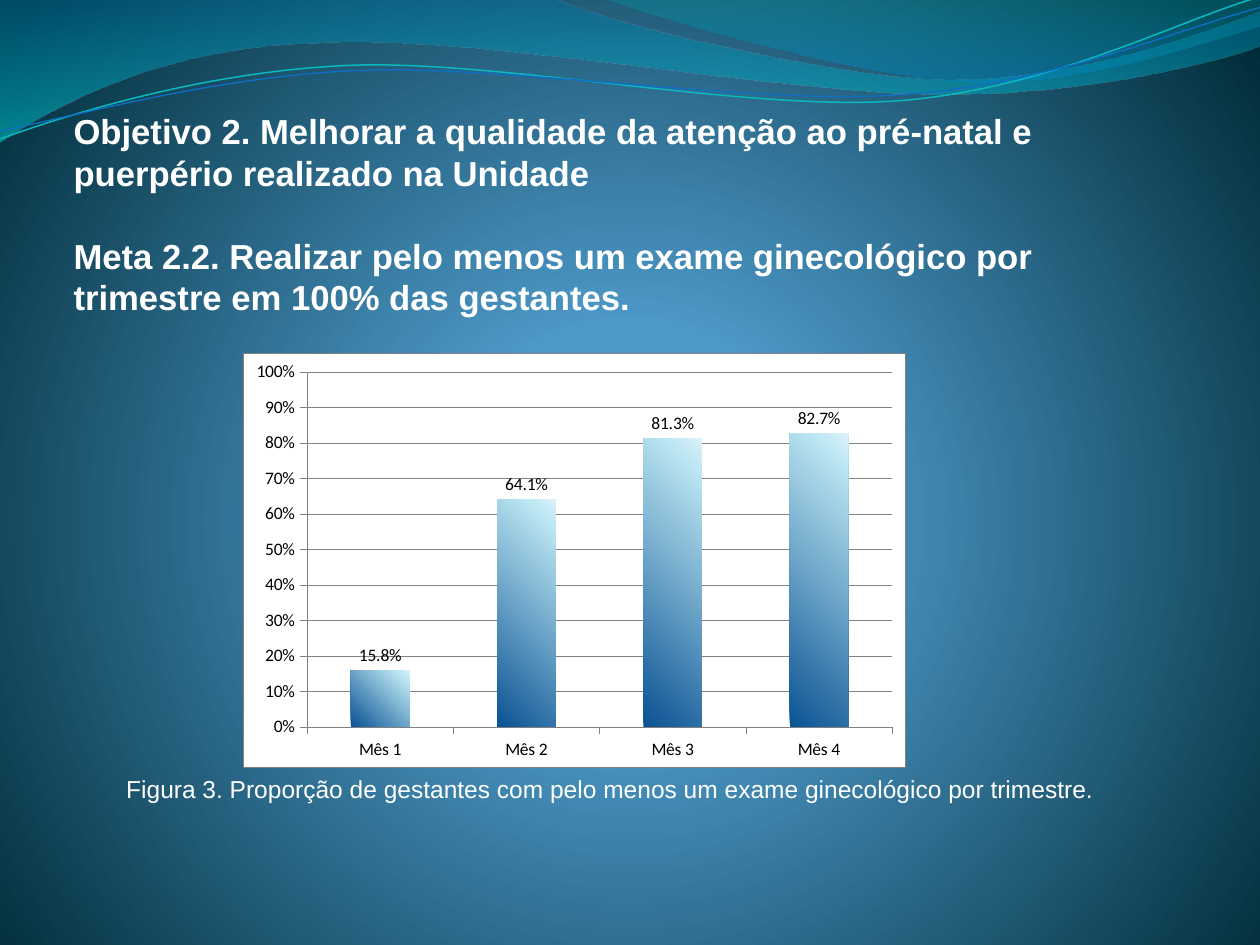
from pptx import Presentation
from pptx.chart.data import CategoryChartData
from pptx.dml.color import RGBColor
from pptx.enum.chart import XL_CHART_TYPE, XL_LABEL_POSITION, XL_TICK_MARK
from pptx.enum.text import MSO_ANCHOR, PP_ALIGN
from pptx.oxml import parse_xml
from pptx.oxml.ns import nsdecls, qn
from pptx.util import Pt

# Content
TITLE = [
    "Objetivo 2. Melhorar a qualidade da atenção ao pré-natal e puerpério realizado na Unidade",
    "Meta 2.2. Realizar pelo menos um exame ginecológico por trimestre em 100% das gestantes.",
]
NOTE = "Figura 3. Proporção de gestantes com pelo menos um exame ginecológico por trimestre."
MONTHS = ["Mês 1", "Mês 2", "Mês 3", "Mês 4"]
RATES = [0.158, 0.641, 0.813, 0.827]

# Gradient stops: position %, colour, opacity %
THEME = {
    "font": "Arial", "chart font": "Calibri",
    "title": 19.8, "note": 14, "label": 10, "lead": 23.75,
    "text": "FFFFFF", "ink": "000000", "paper": "FFFFFF", "rule": "808080",
    "back": [(0, "4AA0D6", 100), (25, "4C98C7", 100), (100, "002C38", 100)],
    "bar": [(0, "0B5394", 100), (90, "BCE7F3", 100), (100, "DEF2F9", 100)],
}

# Wave outlines in points: a pair is a line's end, six numbers are a curve
WAVES = [
    dict(start=(-0.7, -0.7), steps=[
        (316.8, -0.7), (342.7, 12.2, 478.1, 45.4, 545.8, 45.4),
        (614.2, 45.4, 689.8, 18.7, 720, 6.5), (720.7, 25.9),
        (707.8, 31.7, 626.4, 54.7, 537.1, 54),
        (447.8, 54, 275, 20.2, 185, 24.5),
        (92.9, 25.9, 33.1, 59.8, -0.7, 81.4)],
        stops=[(0, "0074A1", 45), (100, "00C6CF", 55)]),
    dict(start=(344.9, -0.7), steps=[
        (366.5, 7.9, 491, 44.6, 553.7, 46.8),
        (616.3, 49.7, 691.9, 23, 720, 15.1), (720, 0)],
        stops=[(0, "00A1A9", 30), (80, "008BBF", 45)]),
    dict(start=(-1.4, 79.9), steps=[
        (34.6, 67, 113.8, 41, 199.4, 37.4),
        (284.4, 33.8, 427, 64.1, 513.4, 57.6),
        (599.8, 51.1, 675.4, 10.8, 718.6, -1.4)],
        line="0AB8BF", width=0.85),
    dict(start=(-1.4, 74.9), steps=[
        (33.8, 69.1, 118.1, 43.9, 203.8, 40.3),
        (290.2, 36.7, 429.8, 60.5, 516.2, 54),
        (601.9, 48.2, 677.5, 15.1, 720, 4.3)],
        line="0F6FC6", width=0.75),
]


def shade(root, stops, course):
    """Swap the first solid fill under root for a gradient; course is its lin or path XML."""
    marks = "".join(
        f'<a:gs pos="{pos * 1000}"><a:srgbClr val="{hue}">'
        f'<a:alpha val="{alpha * 1000}"/></a:srgbClr></a:gs>'
        for pos, hue, alpha in stops)
    old = next(root.iter(qn("a:solidFill")))
    old.getparent().replace(old, parse_xml(
        f'<a:gradFill {nsdecls("a")} rotWithShape="1"><a:gsLst>{marks}</a:gsLst>{course}</a:gradFill>'))


def slant(angle):
    return f'<a:lin ang="{angle * 60000}" scaled="1"/>'


def bend(shape, steps):
    """Join each three line segments that stand for a curve into one Bézier segment."""
    lines = iter(list(shape._element.iter(qn("a:lnTo"))))
    for step in steps:
        first = next(lines)
        if len(step) == 2:
            continue
        curve = parse_xml(f'<a:cubicBezTo {nsdecls("a")}/>')
        first.addprevious(curve)
        for line in (first, next(lines), next(lines)):
            curve.append(line[0])
            line.getparent().remove(line)


def add_wave(slide, start, steps, stops=None, line=None, width=0):
    points = [step[i:i + 2] for step in steps for i in range(0, len(step), 2)]
    grain = 100
    pen = slide.shapes.build_freeform(
        *(v * grain for v in start), scale=Pt(1) / grain)
    pen.add_line_segments([(x * grain, y * grain) for x, y in points],
                          close=stops is not None)
    wave = pen.convert_to_shape()
    bend(wave, steps)
    wave.shadow.inherit = False
    if stops:
        wave.fill.solid()
        shade(wave._element.spPr, stops, slant(90))
        wave.line.fill.background()
    else:
        wave.fill.background()
        wave.line.color.rgb = RGBColor.from_string(line)
        wave.line.width = Pt(width)


def set_font(font, name, size, hue, bold=False):
    font.name, font.size, font.bold = name, Pt(size), bold
    font.color.rgb = RGBColor.from_string(hue)


def add_text(slide, lines, box, size, bold=False, align=PP_ALIGN.LEFT,
             lead=None, gap=0, top=0, right=0):
    frame = slide.shapes.add_textbox(*map(Pt, box)).text_frame
    frame.word_wrap = True
    frame.vertical_anchor = MSO_ANCHOR.TOP
    frame.margin_left = frame.margin_bottom = 0
    frame.margin_top, frame.margin_right = Pt(top), Pt(right)
    for i, line in enumerate(lines):
        para = frame.add_paragraph() if i else frame.paragraphs[0]
        para.alignment = align
        if lead:
            para.line_spacing = Pt(lead)
        para.space_before = Pt(gap if i else 0)
        run = para.add_run()
        run.text = line
        set_font(run.font, THEME["font"], size, THEME["text"], bold)


def rule(line):
    line.color.rgb = RGBColor.from_string(THEME["rule"])
    line.width = Pt(0.25)


def panel(edge):
    """Return chart area formatting: paper fill with the given line content."""
    return parse_xml(
        f'<c:spPr {nsdecls("c", "a")}><a:solidFill><a:srgbClr val="{THEME["paper"]}"/>'
        f'</a:solidFill><a:ln w="3175">{edge}</a:ln></c:spPr>')


def add_bars(slide, box):
    data = CategoryChartData(number_format="0.0%")
    data.categories = MONTHS
    data.add_series("Series 1", RATES)
    chart = slide.shapes.add_chart(
        XL_CHART_TYPE.COLUMN_CLUSTERED, *map(Pt, box), data).chart
    chart.has_title = chart.has_legend = False
    label = THEME["chart font"], THEME["label"], THEME["ink"]
    set_font(chart.font, *label)

    for axis in (chart.category_axis, chart.value_axis):
        axis.major_tick_mark = XL_TICK_MARK.OUTSIDE
        axis.minor_tick_mark = XL_TICK_MARK.NONE
        set_font(axis.tick_labels.font, *label)
        rule(axis.format.line)
    scale = chart.value_axis
    scale.minimum_scale, scale.maximum_scale, scale.major_unit = 0, 1, 0.1
    scale.tick_labels.number_format = "0%"
    scale.tick_labels.number_format_is_linked = False
    rule(scale.major_gridlines.format.line)

    plot = chart.plots[0]
    plot.gap_width, plot.vary_by_categories = 150, False
    bars = plot.series[0]
    bars.format.fill.solid()
    shade(bars._element, THEME["bar"], slant(315))
    tags = bars.data_labels
    tags.show_value = True
    tags.number_format, tags.number_format_is_linked = "0.0%", False
    tags.position = XL_LABEL_POSITION.OUTSIDE_END
    set_font(tags.font, *label)

    space = chart._chartSpace
    area = next(space.iter(qn("c:plotArea")))
    for old in area.findall(qn("c:layout")):
        area.remove(old)
    place = "".join(f'<c:{key} val="{val}"/>' for key, val in
                    dict(layoutTarget="inner", xMode="edge", yMode="edge",
                         x=0.096, y=0.044, w=0.884, h=0.859).items())
    area.insert(0, parse_xml(
        f'<c:layout {nsdecls("c")}><c:manualLayout>{place}</c:manualLayout></c:layout>'))
    area.append(panel("<a:noFill/>"))
    space.find(qn("c:chart")).addnext(panel(
        f'<a:solidFill><a:srgbClr val="{THEME["rule"]}"/></a:solidFill>'))


def main():
    deck = Presentation()
    deck.slide_width, deck.slide_height = Pt(720), Pt(540)
    slide = deck.slides.add_slide(deck.slide_layouts[6])
    slide.background.fill.solid()
    shade(slide._element, THEME["back"],
          '<a:path path="circle"><a:fillToRect l="10000" t="110000" r="10000" b="100000"/></a:path>')
    for wave in WAVES:
        add_wave(slide, **wave)
    add_text(slide, TITLE, (42, 31.7, 618.5, 221), THEME["title"], bold=True,
             lead=THEME["lead"], gap=THEME["lead"], top=31.1, right=1.4)
    add_text(slide, [NOTE], (42, 438.5, 618.5, 33.8), THEME["note"],
             align=PP_ALIGN.CENTER, top=4, right=5)
    add_bars(slide, (139, 202, 378.5, 236.5))
    deck.save("out.pptx")


if __name__ == "__main__":
    main()
